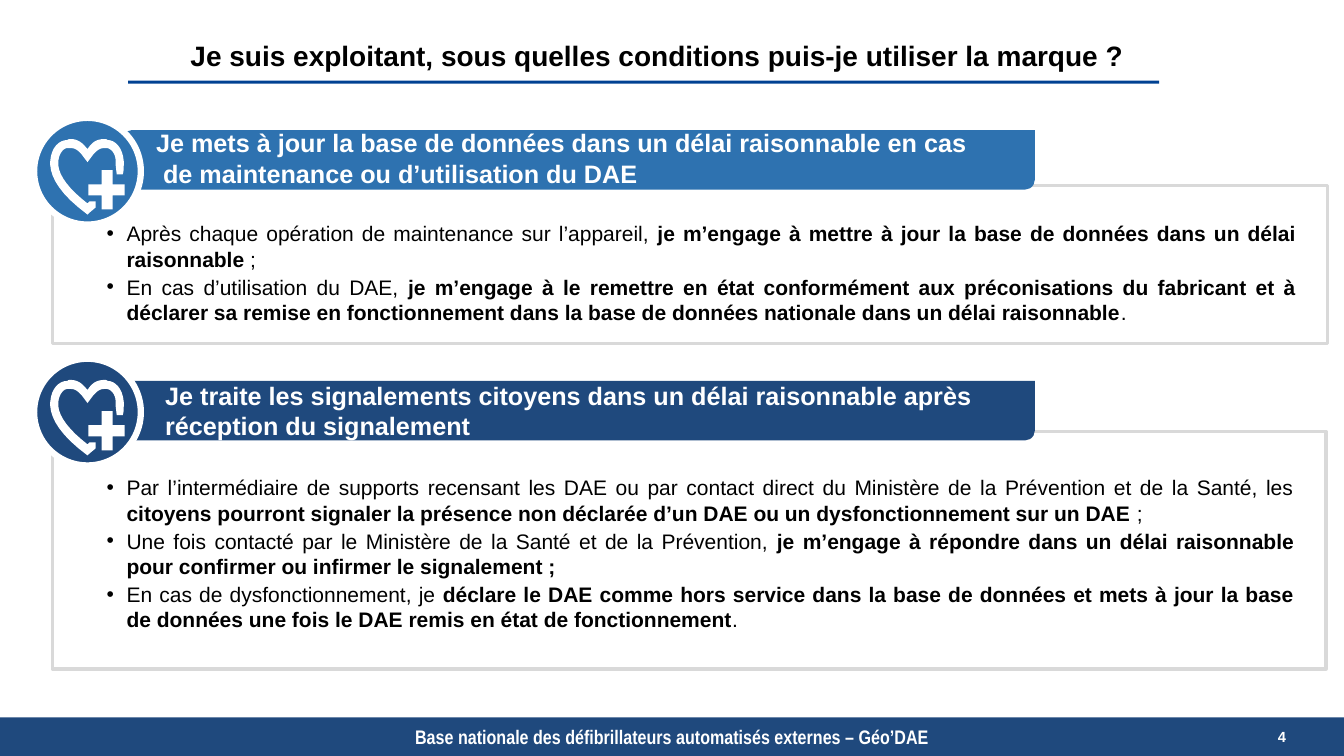
from dataclasses import dataclass

from lxml import etree
from pptx import Presentation
from pptx.dml.color import RGBColor
from pptx.enum.shapes import MSO_SHAPE
from pptx.enum.text import MSO_ANCHOR, MSO_AUTO_SIZE, PP_ALIGN
from pptx.oxml.ns import qn
from pptx.util import Cm, Pt

RECT, OVAL = MSO_SHAPE.RECTANGLE, MSO_SHAPE.OVAL
BANNER = MSO_SHAPE.ROUND_2_DIAG_RECTANGLE
TOP, MIDDLE = MSO_ANCHOR.TOP, MSO_ANCHOR.MIDDLE
LEFT, CENTER, RIGHT, JUSTIFY = (
    PP_ALIGN.LEFT, PP_ALIGN.CENTER, PP_ALIGN.RIGHT, PP_ALIGN.JUSTIFY)
FIT_SHAPE = MSO_AUTO_SIZE.SHAPE_TO_FIT_TEXT


@dataclass(frozen=True)
class Theme:
    navy: str = "1F497D"
    blue: str = "2E72B0"
    rule: str = "004192"
    border: str = "D9D9D9"
    white: str = "FFFFFF"
    black: str = "000000"
    font: str = "Arial"
    footer_font: str = "Arial Narrow"
    title: float = 20
    banner: float = 18
    body: float = 15
    footer: float = 14
    page: float = 10.5


THEME = Theme()
DEFAULT_INSETS = (0.25, 0.13, 0.25, 0.13)
ICON_SIZE = 2.69
ICON_GRID = 106

# Icon outlines on the icon grid: 2 numbers make a line, 6 a Bézier curve.
HEART_START = (53, 85)
HEART = [
    (35, 71, 25, 58, 24, 47), (24, 43), (25, 34, 30, 30, 33, 30), (36, 30),
    (41, 30, 43, 32, 47, 36), (53, 44), (59, 36), (63, 32, 65, 30, 70, 30),
    (72, 30), (75, 30, 81, 34, 81, 43), (81, 47), (82, 56), (88, 56),
    (89, 53, 89, 50, 89, 47), (89, 43), (88, 29, 80, 22, 73, 22),
    (72, 21, 71, 21, 70, 21), (61, 21, 57, 25, 53, 31),
    (48, 25, 44, 21, 36, 21), (35, 21, 34, 21, 33, 22),
    (25, 22, 17, 29, 16, 43), (16, 47), (17, 60, 26, 76, 53, 96),
    (56, 93, 59, 91, 61, 89), (61, 83), (55, 83),
]
CROSS_START = (78, 66)
CROSS = [(78, 52), (67, 52), (67, 66), (54, 66), (54, 77), (67, 77),
         (67, 91), (78, 91), (78, 77), (90, 77), (90, 66)]

# Each section: colour, icon top, banner top, banner insets, banner wrap,
# banner lines, card box, text box, bullets (bold between double asterisks).
SECTIONS = [
    (THEME.blue, 2.97, 3.28, (0, 0, 0, 0.1), False,
     ["Je mets à jour la base de données dans un délai raisonnable en cas",
      " de maintenance ou d’utilisation du DAE"],
     (1.32, 4.67, 32.13, 3.99), (2.44, 5.44, 30.48, 2.9),
     ["Après chaque opération de maintenance sur l’appareil, **je m’engage à "
      "mettre à jour la base de données dans un délai raisonnable **;",
      "En cas d’utilisation du DAE, **je m’engage à le remettre en état "
      "conformément aux préconisations du fabricant et à déclarer sa remise "
      "en fonctionnement dans la base de données nationale dans un délai "
      "raisonnable**."]),
    (THEME.navy, 9.04, 9.6, (0.23, 0, 0.23, 0), True,
     ["Je traite les signalements citoyens dans un délai raisonnable après "
      "réception du signalement"],
     (1.32, 10.87, 32.1, 5.99), (2.44, 11.84, 30.43, 4.24),
     ["Par l’intermédiaire de supports recensant les DAE ou par contact "
      "direct du Ministère de la Prévention et de la Santé, les **citoyens "
      "pourront signaler la présence non déclarée d’un DAE ou un "
      "dysfonctionnement sur un DAE** ;",
      "Une fois contacté par le Ministère de la Santé et de la Prévention, "
      "**je m’engage à répondre dans un délai raisonnable pour confirmer ou "
      "infirmer le signalement ;**",
      "En cas de dysfonctionnement, je **déclare le DAE comme hors service "
      "dans la base de données et mets à jour la base de données une fois le "
      "DAE remis en état de fonctionnement**."]),
]


def paint(sp, fill, line=None, width=0):
    sp.shadow.inherit = False
    sp.fill.solid()
    sp.fill.fore_color.rgb = RGBColor.from_string(fill)
    if line:
        sp.line.color.rgb = RGBColor.from_string(line)
        sp.line.width = Pt(width)
    else:
        sp.line.fill.background()


def add_shape(slide, kind, box, fill, line=None, width=0):
    sp = slide.shapes.add_shape(kind, *map(Cm, box))
    paint(sp, fill, line, width)
    return sp


def set_frame(tf, anchor, insets=DEFAULT_INSETS, wrap=True):
    tf.word_wrap = wrap
    tf.vertical_anchor = anchor
    tf.margin_left, tf.margin_top, tf.margin_right, tf.margin_bottom = map(
        Cm, insets)


def style(font, size, color, bold=True, name=THEME.font):
    font.size = Pt(size)
    font.name = name
    font.bold = bold
    font.color.rgb = RGBColor.from_string(color)


def add_label(slide, box, text, size, color, align=LEFT,
              insets=DEFAULT_INSETS, name=THEME.font):
    tf = slide.shapes.add_textbox(*map(Cm, box)).text_frame
    set_frame(tf, MIDDLE, insets)
    tf.text = text
    p = tf.paragraphs[0]
    p.alignment = align
    style(p.runs[0].font, size, color, name=name)


def add_banner(slide, top, fill, lines, insets, wrap):
    sp = add_shape(slide, BANNER, (3.07, top, 23.01, 1.5), fill)
    tf = sp.text_frame
    set_frame(tf, MIDDLE, insets, wrap)
    tf.text = "\n".join(lines)
    for p in tf.paragraphs:
        p.alignment = LEFT
        p._p.get_or_add_pPr().set("marL", str(Cm(0.79)))
        style(p.runs[0].font, THEME.banner, THEME.white)


def add_bullets(slide, box, items):
    tf = slide.shapes.add_textbox(*map(Cm, box)).text_frame
    set_frame(tf, TOP)
    tf.auto_size = FIT_SHAPE
    for i, item in enumerate(items):
        p = tf.add_paragraph() if i else tf.paragraphs[0]
        pPr = p._p.get_or_add_pPr()
        pPr.set("marL", str(Cm(0.5)))
        pPr.set("indent", str(-Cm(0.5)))
        etree.SubElement(pPr, qn("a:buFont")).set("typeface", THEME.font)
        etree.SubElement(pPr, qn("a:buChar")).set("char", "•")
        p.alignment = JUSTIFY
        p.space_after = Pt(1)
        if i:
            p.space_before = Pt(1)
        for j, part in enumerate(item.split("**")):
            if part:
                r = p.add_run()
                r.text = part
                style(r.font, THEME.body, THEME.black, bold=j % 2 == 1)


def flatten(start, segments, steps=8):
    """Turn lines and cubic curves into a list of points."""
    points = [start]
    for seg in segments:
        if len(seg) == 2:
            points.append(seg)
            continue
        controls = [points[-1], seg[:2], seg[2:4], seg[4:]]
        for t in (k / steps for k in range(1, steps + 1)):
            weights = ((1 - t) ** 3, 3 * t * (1 - t) ** 2,
                       3 * t * t * (1 - t), t ** 3)
            points.append(tuple(
                sum(w * c[axis] for w, c in zip(weights, controls))
                for axis in (0, 1)))
    return points


def add_icon(slide, left, top, fill):
    add_shape(slide, OVAL, (left, top, ICON_SIZE, ICON_SIZE), fill,
              THEME.white, 4.5)
    unit = ICON_SIZE / ICON_GRID
    for start, segments in ((HEART_START, HEART), (CROSS_START, CROSS)):
        points = [(Cm(left + x * unit), Cm(top + y * unit))
                  for x, y in flatten(start, segments)]
        builder = slide.shapes.build_freeform(*points[0])
        builder.add_line_segments(points[1:], close=True)
        paint(builder.convert_to_shape(), THEME.white)


def main():
    prs = Presentation()
    prs.slide_width, prs.slide_height = Cm(33.87), Cm(19.05)
    slide = prs.slides.add_slide(prs.slide_layouts[6])

    add_shape(slide, RECT, (0, 18.08, 33.87, 0.97), THEME.navy)
    add_label(slide, (7.44, 18.29, 19, 0.56),
              "Base nationale des défibrillateurs automatisés externes – "
              "Géo’DAE", THEME.footer, THEME.white, CENTER,
              name=THEME.footer_font)
    add_label(slide, (27.41, 18.08, 5, 0.99), "4", THEME.page, THEME.white,
              RIGHT, (0, 0, 0, 0))
    add_shape(slide, RECT, (3.23, 2.03, 25.98, 0.08), THEME.rule)
    add_label(slide, (4.55, 0.81, 24.2, 1.19),
              "Je suis exploitant, sous quelles conditions puis-je utiliser "
              "la marque ?", THEME.title, THEME.black)

    for (color, icon_top, banner_top, insets, wrap, lines, card, text_box,
         bullets) in SECTIONS:
        add_shape(slide, RECT, card, THEME.white, THEME.border, 2.25)
        add_banner(slide, banner_top, color, lines, insets, wrap)
        add_icon(slide, 0.86, icon_top, color)
        add_bullets(slide, text_box, bullets)

    prs.save("out.pptx")


if __name__ == "__main__":
    main()
